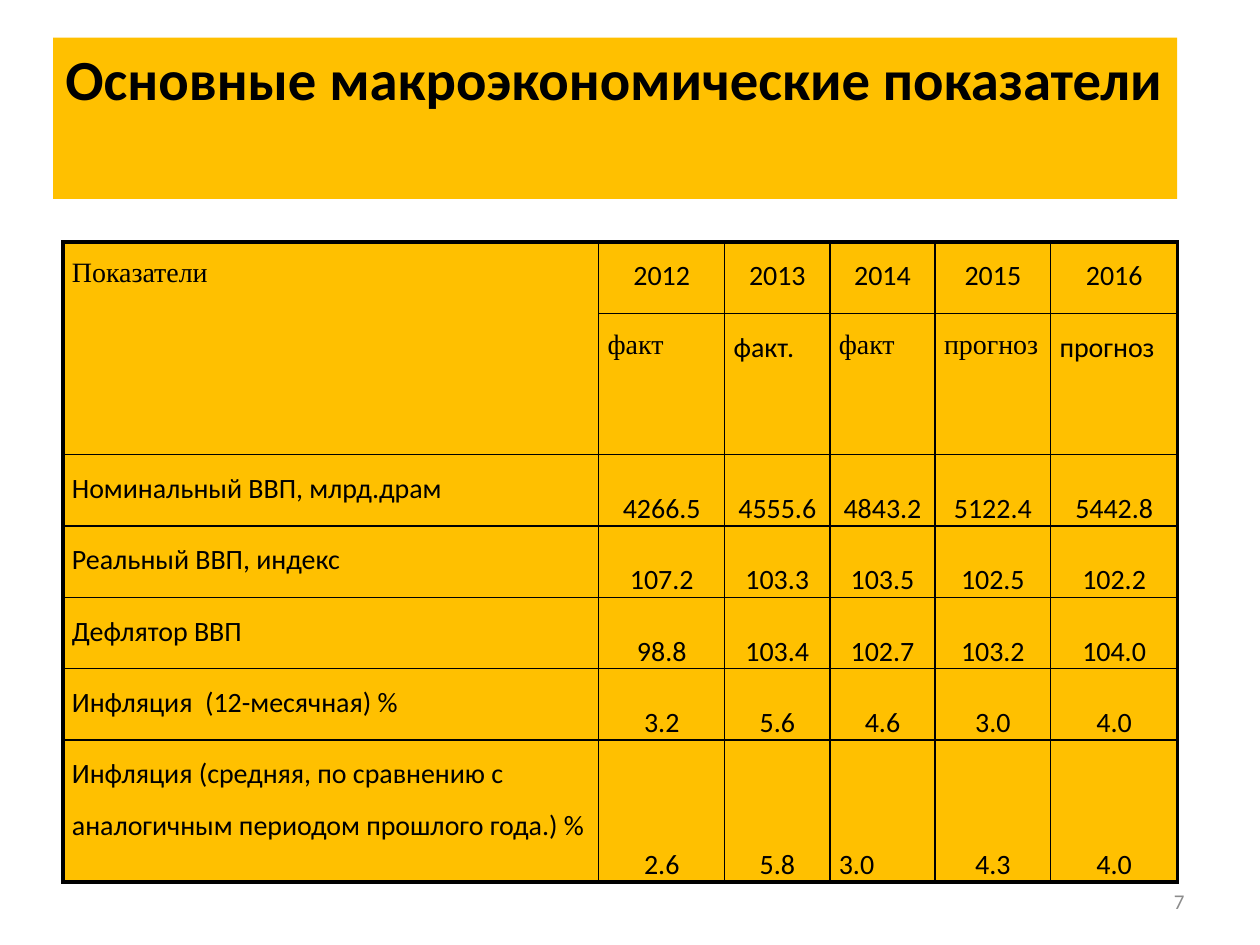
from lxml.etree import SubElement
from pptx import Presentation
from pptx.dml.color import RGBColor
from pptx.enum.shapes import MSO_SHAPE
from pptx.enum.text import MSO_ANCHOR, PP_ALIGN
from pptx.oxml.ns import qn
from pptx.util import Cm, Pt

# Content
TITLE = "Основные макроэкономические показатели"
PAGE_NUMBER = "7"
ROWS = [
    ["Показатели", "2012", "2013", "2014", "2015", "2016"],
    ["", "факт", "факт.", "факт", "прогноз", "прогноз"],
    ["Номинальный ВВП, млрд.драм", "4266.5", "4555.6", "4843.2", "5122.4", "5442.8"],
    ["Реальный ВВП, индекс", "107.2", "103.3", "103.5", "102.5", "102.2"],
    ["Дефлятор ВВП", "98.8", "103.4", "102.7", "103.2", "104.0"],
    ["Инфляция  (12-месячная) %", "3.2", "5.6", "4.6", "3.0", "4.0"],
    ["Инфляция (средняя, по сравнению с аналогичным периодом прошлого года.) %",
     "2.6", "5.8", "3.0", "4.3", "4.0"],
]
COLUMN_WIDTHS = [10.8, 2.54, 2.12, 2.12, 2.33, 2.56]
ROW_HEIGHTS = [1.44, 2.84, 1.44, 1.44, 1.44, 1.44, 2.86]

# Cells that depart from the general rules, as (row, column)
SERIF_CELLS = {(0, 0), (1, 1), (1, 3), (1, 4)}
LEFT_VALUES = {(6, 3)}
SINGLE_SPACED_ROWS = {2, 3, 4}

AMBER, BLACK, GRAY = "FFC000", "000000", "8C8C8C"
OUTER_LINE, INNER_LINE = Pt(2.25), Pt(1)


def color(hex_string):
    return RGBColor.from_string(hex_string)


def write(frame, text, size, hex_string, align, font="Calibri", bold=False):
    paragraph = frame.paragraphs[0]
    paragraph.text = text
    paragraph.alignment = align
    paragraph.font.name = font
    paragraph.font.size = Pt(size)
    paragraph.font.bold = bold
    paragraph.font.color.rgb = color(hex_string)
    return paragraph


def add_border(cell, side, width):
    line = SubElement(cell._tc.get_or_add_tcPr(), qn(f"a:ln{side}"), w=str(width))
    SubElement(SubElement(line, qn("a:solidFill")), qn("a:srgbClr"), val=BLACK)


presentation = Presentation()
presentation.slide_width, presentation.slide_height = Cm(25.4), Cm(19.05)
slide = presentation.slides.add_slide(presentation.slide_layouts[6])

# Title band
band = slide.shapes.add_shape(MSO_SHAPE.RECTANGLE, Cm(1.07), Cm(0.76), Cm(22.66), Cm(3.25))
band.shadow.inherit = False
band.fill.solid()
band.fill.fore_color.rgb = color(AMBER)
band.line.fill.background()
band.text_frame.word_wrap = True
band.text_frame.vertical_anchor = MSO_ANCHOR.TOP
band.text_frame.margin_right = 0
write(band.text_frame, TITLE, 32.4, BLACK, PP_ALIGN.LEFT, bold=True)

# Page number
page = slide.shapes.add_textbox(Cm(18.21), Cm(17.65), Cm(5.92), Cm(1.02)).text_frame
page.word_wrap = True
page.vertical_anchor = MSO_ANCHOR.MIDDLE
write(page, PAGE_NUMBER, 12, GRAY, PP_ALIGN.RIGHT)

# Indicator table
indicators = slide.shapes.add_table(
    len(ROWS), len(COLUMN_WIDTHS), Cm(1.27), Cm(4.88),
    Cm(sum(COLUMN_WIDTHS)), Cm(sum(ROW_HEIGHTS))).table
indicators.first_row = indicators.horz_banding = False
for column, width in zip(indicators.columns, COLUMN_WIDTHS):
    column.width = Cm(width)
for row, height in zip(indicators.rows, ROW_HEIGHTS):
    row.height = Cm(height)
indicators.cell(0, 0).merge(indicators.cell(1, 0))

last_row, last_column = len(ROWS) - 1, len(COLUMN_WIDTHS) - 1
for r, texts in enumerate(ROWS):
    for c, text in enumerate(texts):
        cell = indicators.cell(r, c)
        on_edge = {"L": c == 0, "R": c == last_column, "T": r == 0, "B": r == last_row}
        for side, outer in on_edge.items():
            add_border(cell, side, OUTER_LINE if outer else INNER_LINE)
        cell.fill.solid()
        cell.fill.fore_color.rgb = color(AMBER)
        cell.margin_left = cell.margin_right = Cm(0.18)
        cell.margin_top = cell.margin_bottom = 0

        is_value = r > 1 and c > 0
        cell.vertical_anchor = MSO_ANCHOR.BOTTOM if is_value else MSO_ANCHOR.TOP
        centered = c > 0 and r != 1 and (r, c) not in LEFT_VALUES
        font = "Times New Roman" if (r, c) in SERIF_CELLS else "Calibri"
        paragraph = write(cell.text_frame, text, 16, BLACK,
                          PP_ALIGN.CENTER if centered else PP_ALIGN.LEFT, font)
        single = is_value and r in SINGLE_SPACED_ROWS
        paragraph.line_spacing = 1.0 if single else 1.5

presentation.save("out.pptx")
